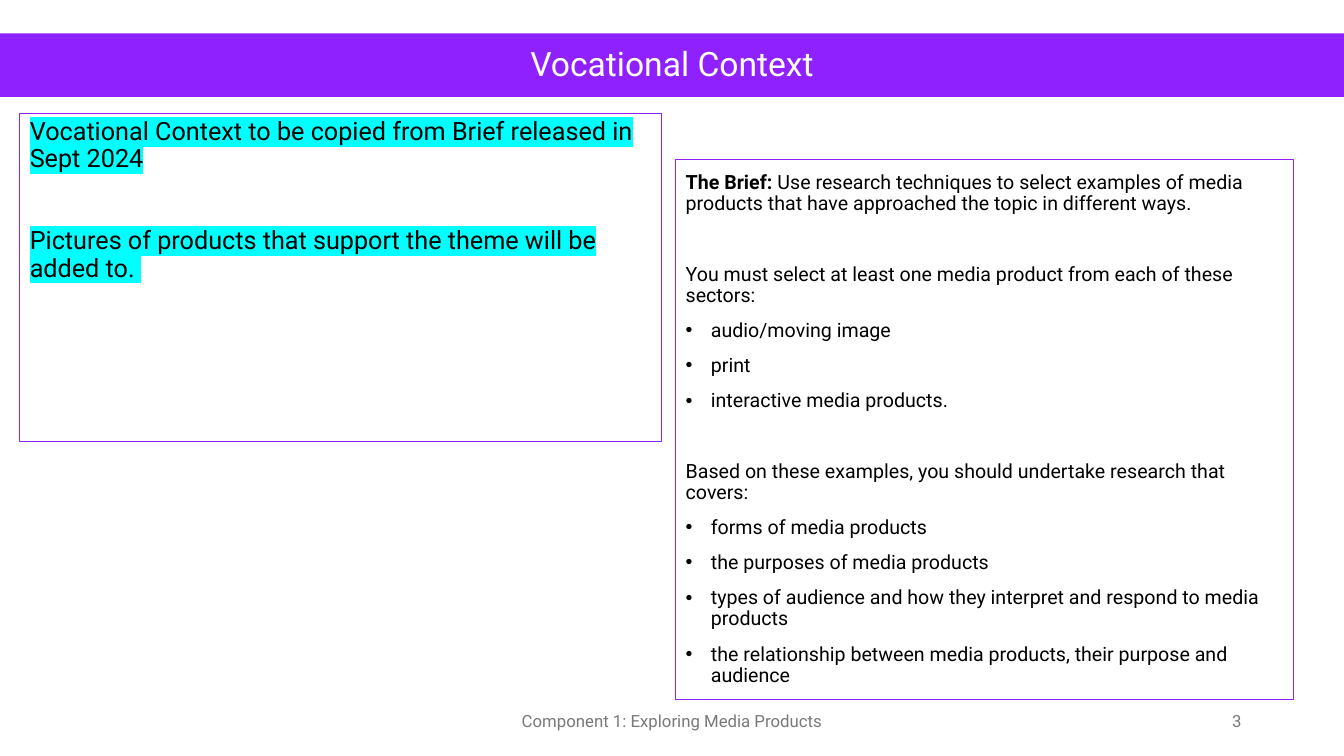
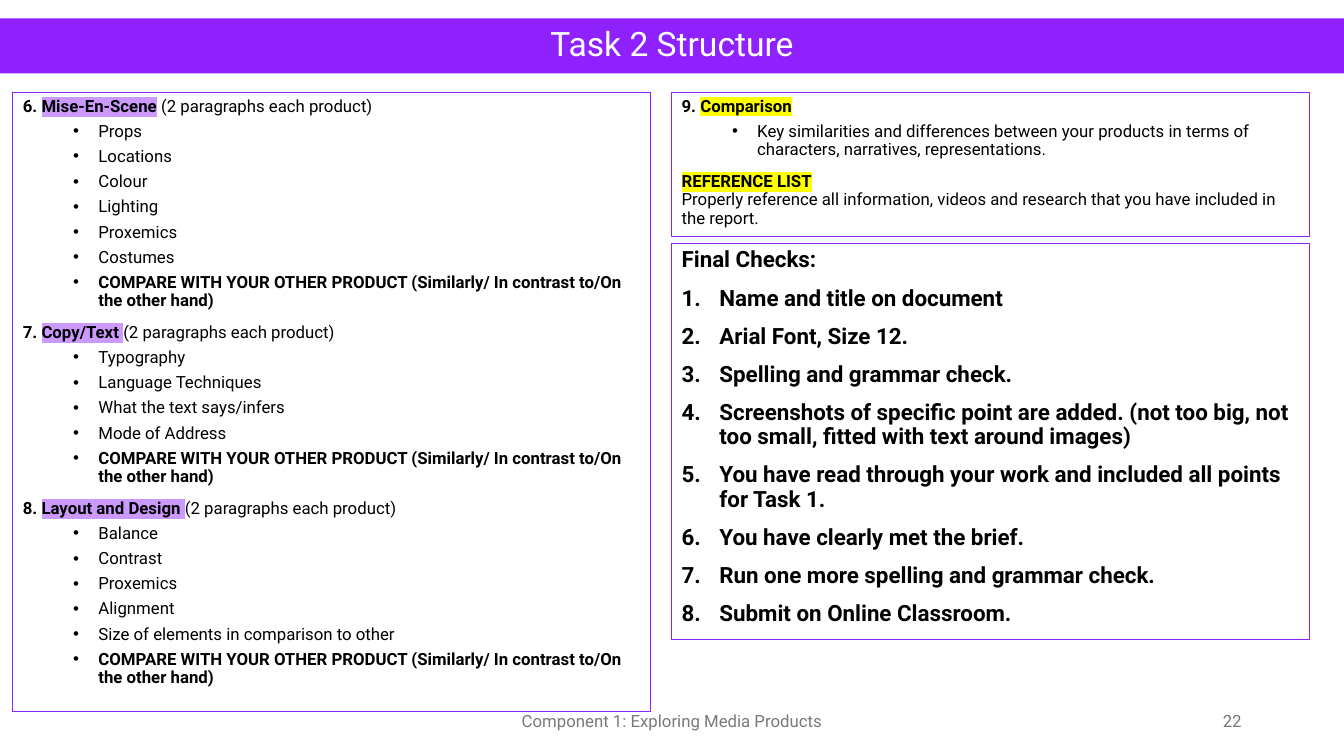
from lxml.etree import SubElement as Sub
from pptx import Presentation
from pptx.dml.color import RGBColor as Rgb
from pptx.enum.text import MSO_ANCHOR as Anchor, MSO_AUTO_SIZE as Fit, PP_ALIGN as Align
from pptx.oxml.ns import qn
from pptx.util import Pt

HUE = {"band": "9021FF", "white": "FFFFFF", "black": "000000", "grey": "797979",
       "cyan": "00FFFF", "mauve": "CC99FF", "yellow": "FFFF00"}
FACE = "Roboto"
WIDE = 960
KINDS = {"text": (0, 0, 10, None), "gap": (0, 0, 35, None), "wide": (0, 0, 39.2, None),
         "tight": (0, 0, 0, None), "dot": (18, 0, 10, "•"), "sub": (54, 1, 5, "•"),
         "num": (27, 0, 10, "auto")}


def style(para, size, hue, bold=None):
    font = para.font
    font.name, font.size, font.bold = FACE, Pt(size), bold
    font.color.rgb = Rgb.from_string(HUE[hue])


def panel(slide, area, size, rows, anchor=Anchor.TOP):
    box = slide.shapes.add_textbox(*map(Pt, area))
    box.line.color.rgb = Rgb.from_string(HUE["band"])
    box.line.width = Pt(0.75)
    frame = box.text_frame
    frame.word_wrap, frame.vertical_anchor = True, anchor
    for i, (kind, *parts) in enumerate(rows):
        para = frame.add_paragraph() if i else frame.paragraphs[0]
        left, level, before, mark = KINDS[kind]
        para.line_spacing, para.level = 0.9, level
        para.space_before = Pt(before if i else 0)
        if mark:
            props = para._p.get_or_add_pPr()
            hang = 27 if mark == "auto" else 18
            props.set("marL", str(Pt(left)))
            props.set("indent", str(Pt(-hang)))
            if mark == "auto":
                Sub(props, qn("a:buAutoNum"), type="arabicPeriod")
            else:
                Sub(props, qn("a:buFont"), typeface="Arial")
                Sub(props, qn("a:buChar"), char=mark)
        bolds = {bold for _, bold, _ in parts}
        style(para, size, "black", bolds.pop() if len(bolds) == 1 else None)
        for text, bold, glow in parts:
            run = para.add_run()
            run.text = text
            if bolds:
                run.font.bold = bold
            if glow:
                high = Sub(run._r.get_or_add_rPr(), qn("a:highlight"))
                Sub(high, qn("a:srgbClr"), val=HUE[glow])


deck = Presentation()
deck.slide_width, deck.slide_height = Pt(WIDE), Pt(540)

slides = []
for name, top, high, page in [("Vocational Context", 23.8, 45.5, "3"),
                              ("Task 2 Structure", 13.2, 39.2, "22")]:
    slide = deck.slides.add_slide(deck.slide_layouts[5])
    slides.append(slide)
    title = slide.shapes.title
    title.left, title.top, title.width, title.height = map(Pt, (0, top, WIDE, high))
    title.fill.solid()
    title.fill.fore_color.rgb = Rgb.from_string(HUE["band"])
    frame = title.text_frame
    frame.text = name
    frame.auto_size, frame.vertical_anchor = Fit.NONE, Anchor.MIDDLE
    para = frame.paragraphs[0]
    para.alignment, para.line_spacing = Align.CENTER, 0.9
    style(para, 24, "white")
    for text, left, width, align in [
            ("Component 1: Exploring Media Products", 318, 324, Align.CENTER),
            (page, 678, 216, Align.RIGHT)]:
        foot = slide.shapes.add_textbox(Pt(left), Pt(500.5), Pt(width), Pt(28.75))
        frame = foot.text_frame
        frame.text = text
        frame.word_wrap, frame.vertical_anchor = True, Anchor.MIDDLE
        para = frame.paragraphs[0]
        para.alignment = align
        style(para, 12, "grey")

brief, task = slides

panel(brief, (14.2, 81.2, 458.4, 234), 18, [
    ("text", ("Vocational Context to be copied from Brief released in Sept 2024", False, "cyan")),
    ("wide", ("Pictures of products that support the theme will be added to. ", False, "cyan"))])

rows = [("text", ("The Brief: ", True, None),
         ("Use research techniques to select examples of media products that have "
          "approached the topic in different ways.", False, None))]
for lead, items in [
        ("You must select at least one media product from each of these sectors:",
         ["audio/moving image", "print", "interactive media products."]),
        ("Based on these examples, you should undertake research that covers:",
         ["forms of media products", "the purposes of media products",
          "types of audience and how they interpret and respond to media products",
          "the relationship between media products, their purpose and audience"])]:
    rows.append(("gap", (lead, False, None)))
    rows += [("dot", (item, False, None)) for item in items]
panel(brief, (482.7, 114, 441.3, 385.8), 14, rows, Anchor.MIDDLE)

rows = []
for num, (head, items) in enumerate([
        ("Mise-En-Scene", ["Props", "Locations", "Colour", "Lighting", "Proxemics", "Costumes"]),
        ("Copy/Text", ["Typography", "Language Techniques", "What the text says/infers",
                       "Mode of Address"]),
        ("Layout and Design", ["Balance", "Contrast", "Proxemics", "Alignment",
                               "Size of elements in comparison to other"])], 6):
    rows.append(("text", (f"{num}. ", True, None), (head, True, "mauve"),
                 (" ", True, "mauve" if num > 6 else None),
                 ("(2 paragraphs each product)", False, None)))
    rows += [("sub", (item, False, None)) for item in items]
    rows.append(("sub", ("COMPARE WITH YOUR OTHER PRODUCT (Similarly/ In contrast to/On "
                         "the other hand)", True, None)))
panel(task, (9.2, 66.4, 455.6, 441.6), 12, rows)

panel(task, (479.8, 66.4, 455.6, 102.4), 12, [
    ("text", ("9. ", True, None), ("Comparison", True, "yellow")),
    ("sub", ("Key similarities and differences between your products in terms of "
             "characters, narratives, representations.", False, None)),
    ("text", ("REFERENCE LIST", True, "yellow")),
    ("tight", ("Properly reference all information, videos and research that you have "
               "included in the report.", False, None))])

checks = ["Name and title on document", "Arial Font, Size 12.", "Spelling and grammar check.",
          "Screenshots of specific point are added. (not too big, not too small, "
          "fitted with text around images)",
          "You have read through your work and included all points for Task 1.",
          "You have clearly met the brief.", "Run one more spelling and grammar check.",
          "Submit on Online Classroom."]
panel(task, (479.8, 174, 455.6, 283), 16,
      [("text", ("Final Checks:", True, None))] + [("num", (check, True, None)) for check in checks])

deck.save("out.pptx")
